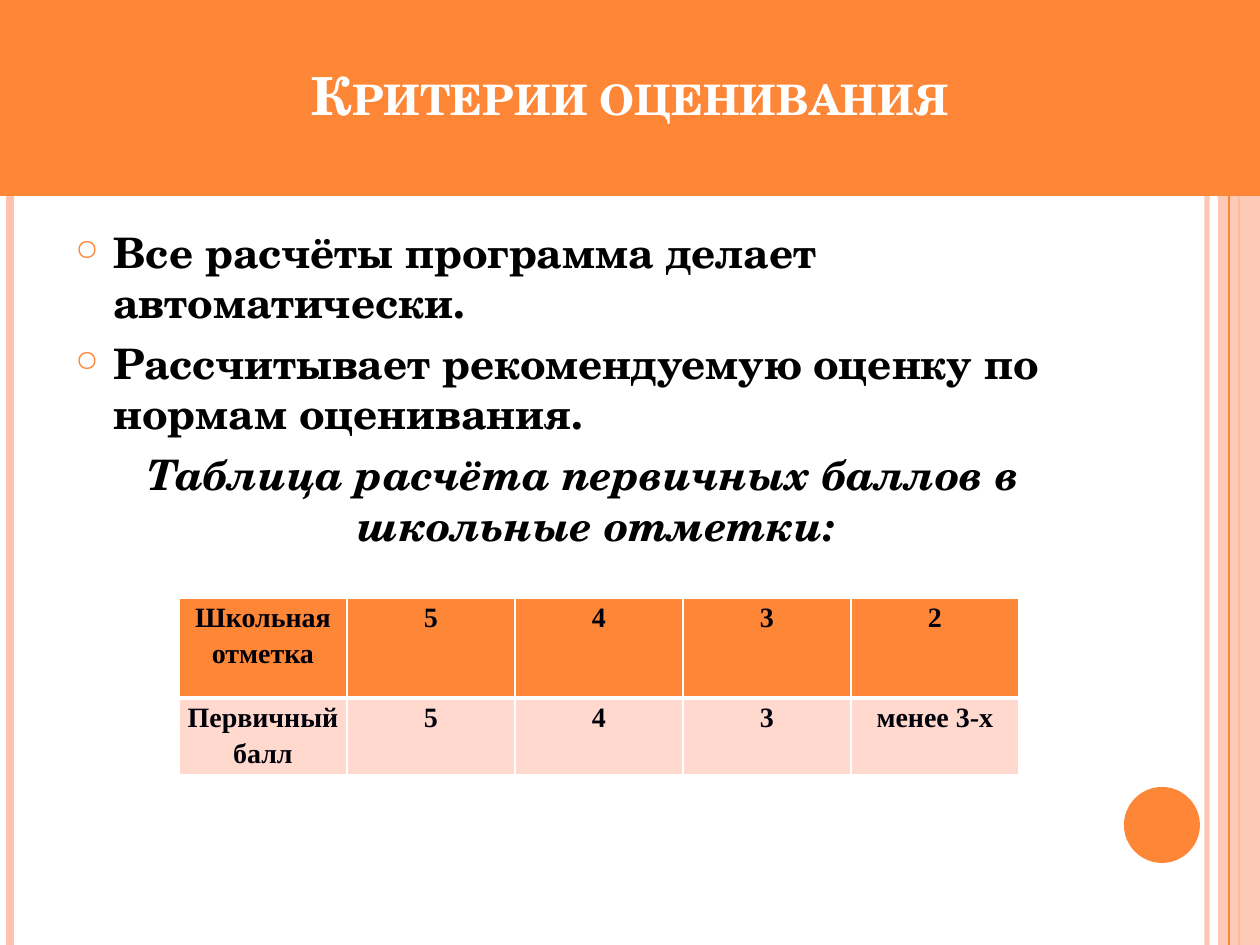
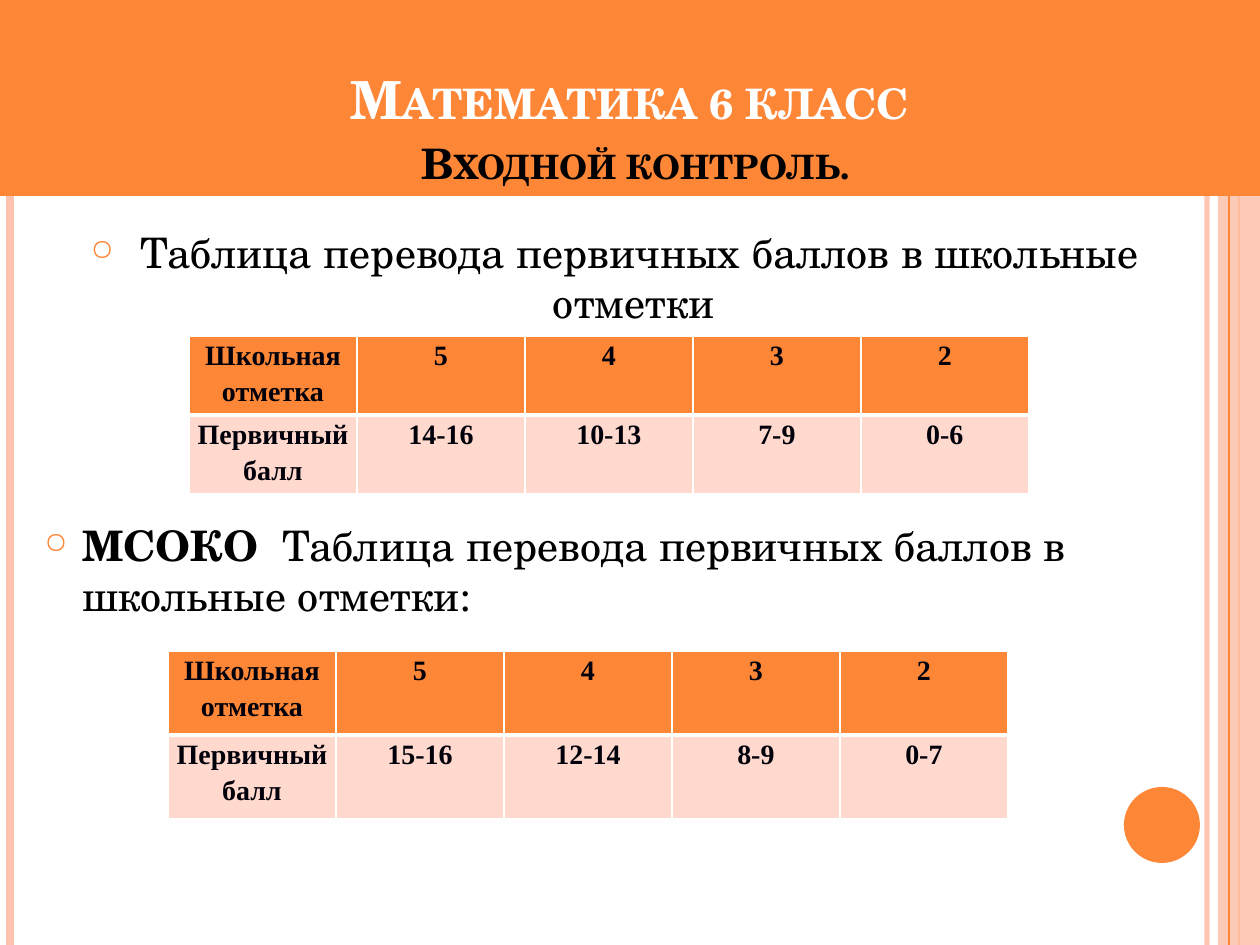
from dataclasses import dataclass

from lxml import etree
from pptx import Presentation
from pptx import util as u
from pptx.dml.color import RGBColor
from pptx.enum import shapes, text
from pptx.oxml import ns

PX = u.Inches(1) / 126
PAGE_WIDTH, PAGE_HEIGHT = 1260, 945
COLUMN_WIDTH = 168
BORDER_SIDES = ("L", "R", "T", "B")


@dataclass(frozen=True)
class Theme:
    accent: str = "FE8637"
    pale: str = "FEC3AE"
    pale_cell: str = "FFD9CE"
    white: str = "FFFFFF"
    black: str = "000000"
    ink: str = "00000A"
    main_font: str = "TeX Gyre Schola"
    table_font: str = "Times New Roman"
    title_size: int = 30
    subtitle_gap_size: int = 28
    body_size: int = 24
    table_size: int = 16


THEME = Theme()


@dataclass(frozen=True)
class Stripe:
    x: int
    width: float
    color: str
    opacity: int = 100


@dataclass(frozen=True)
class Span:
    words: str
    size: int = THEME.body_size
    color: str = THEME.black
    bold: bool = False
    italic: bool = False
    small_caps: bool = False


@dataclass(frozen=True)
class Item:
    spans: tuple[Span, ...]
    bullet: bool = True
    centered: bool = False
    space_before: int = 6


@dataclass(frozen=True)
class MarkTable:
    left: int
    top: int
    row_heights: tuple[int, int]
    scores: tuple[str, ...]


@dataclass(frozen=True)
class Page:
    title_lines: tuple[tuple[Span, ...], ...]
    title_bottom_inset: int
    body_frame: tuple[int, int, int, int]
    items: tuple[Item, ...]
    tables: tuple[MarkTable, ...]


OUTER_STRIPES = (
    Stripe(1207, 3, THEME.pale, 93),
    Stripe(10, 4.5, THEME.pale),
    Stripe(1239, 1.5, THEME.accent),
)
INNER_STRIPE = Stripe(1229, 0.75, THEME.accent)


def title_span(words: str, **style) -> Span:
    return Span(words, **{"size": THEME.title_size, "color": THEME.white,
                          "bold": True, "small_caps": True, **style})


PAGES = (
    Page(
        title_lines=((title_span("Критерии оценивания"),),),
        title_bottom_inset=69,
        body_frame=(63, 220, 1029, 672),
        items=(
            Item((Span("Все расчёты программа делает автоматически.", bold=True),)),
            Item((Span("Рассчитывает рекомендуемую оценку по нормам оценивания.", bold=True),)),
            Item((Span(" Таблица расчёта первичных баллов в школьные отметки:",
                       bold=True, italic=True),), bullet=False, centered=True),
        ),
        tables=(MarkTable(179, 598, (100, 70), ("5", "4", "3", "менее 3-х")),),
    ),
    Page(
        title_lines=(
            (title_span("Математика 6 класс"),),
            (title_span(" ", size=THEME.subtitle_gap_size, color=THEME.black),
             title_span("Входной контроль.", size=THEME.body_size, color=THEME.black)),
        ),
        title_bottom_inset=6,
        body_frame=(32, 220, 1165, 672),
        items=(
            Item((Span(" Таблица перевода первичных баллов в школьные отметки"),), centered=True),
            Item((Span("МСОКО  ", bold=True),
                  Span("Таблица перевода первичных баллов в школьные отметки:")),
                 space_before=110),
        ),
        tables=(
            MarkTable(189, 336, (79, 79), ("14-16", "10-13", "7-9", "0-6")),
            MarkTable(168, 651, (84, 84), ("15-16", "12-14", "8-9", "0-7")),
        ),
    ),
)


def px(*lengths: int) -> list[u.Emu]:
    return [u.Emu(round(length * PX)) for length in lengths]


def rgb(color: str) -> RGBColor:
    return RGBColor.from_string(color)


def add_xml(parent, tag: str, **attributes: str):
    return etree.SubElement(parent, ns.qn(tag), attributes)


def set_opacity(shape, percent: int) -> None:
    for color in shape.element.iter(ns.qn("a:srgbClr")):
        add_xml(color, "a:alpha", val=str(percent * 1000))


def add_span(para, words: str, *, size: int, color: str, font: str = THEME.main_font,
             bold: bool = False, italic: bool = False, small_caps: bool = False) -> None:
    span = para.add_run()
    span.text = words
    span.font.name = font
    span.font.size = u.Pt(size)
    span.font.bold = bold
    span.font.italic = italic
    span.font.color.rgb = rgb(color)
    if small_caps:
        span.font._element.set("cap", "small")


def add_spans(para, spans: tuple[Span, ...]) -> None:
    for span in spans:
        add_span(para, span.words, size=span.size, color=span.color, bold=span.bold,
                 italic=span.italic, small_caps=span.small_caps)


def add_stripe(page, stripe: Stripe):
    line = page.shapes.add_connector(shapes.MSO_CONNECTOR.STRAIGHT,
                                     *px(stripe.x, 0, stripe.x, PAGE_HEIGHT))
    line.line.color.rgb = rgb(stripe.color)
    line.line.width = u.Pt(stripe.width)
    add_xml(line.element.spPr, "a:effectLst")
    if stripe.opacity < 100:
        set_opacity(line, stripe.opacity)
    return line


def add_plain_shape(page, kind, frame: tuple[int, int, int, int], color: str):
    shape = page.shapes.add_shape(kind, *px(*frame))
    shape.shadow.inherit = False
    shape.fill.solid()
    shape.fill.fore_color.rgb = rgb(color)
    shape.line.fill.background()
    return shape


def decorate_layout(layout, page) -> None:
    decorations = [add_stripe(page, stripe) for stripe in OUTER_STRIPES]
    side_band = add_plain_shape(page, shapes.MSO_SHAPE.RECTANGLE,
                                (1218, 0, 42, PAGE_HEIGHT), THEME.pale)
    set_opacity(side_band, 87)
    circle = add_plain_shape(page, shapes.MSO_SHAPE.OVAL, (1124, 787, 76, 76), THEME.accent)
    decorations += [side_band, add_stripe(page, INNER_STRIPE), circle]
    for number, shape in enumerate(decorations, start=101):
        shape.element.xpath(".//p:cNvPr")[0].set("id", str(number))
        layout.shapes.element.append(shape.element)


def fill_title(page, content: Page) -> None:
    title = page.shapes.title
    title.left, title.top, title.width, title.height = px(0, 0, PAGE_WIDTH, 195)
    title.fill.solid()
    title.fill.fore_color.rgb = rgb(THEME.accent)
    title.line.color.rgb = rgb(THEME.accent)
    title.line.width = u.Pt(0.75)
    frame = title.text_frame
    frame.auto_size = text.MSO_AUTO_SIZE.NONE
    frame.vertical_anchor = text.MSO_ANCHOR.BOTTOM
    frame.margin_bottom = px(content.title_bottom_inset)[0]
    para = frame.paragraphs[0]
    para.alignment = text.PP_ALIGN.CENTER
    for index, spans in enumerate(content.title_lines):
        if index:
            para.add_line_break()
        add_spans(para, spans)


def format_item(para, item: Item) -> None:
    para.alignment = text.PP_ALIGN.CENTER if item.centered else text.PP_ALIGN.LEFT
    para.space_before = u.Pt(item.space_before)
    properties = para._p.get_or_add_pPr()
    properties.set("marL", str(u.Inches(0.3)))
    properties.set("indent", str(-u.Inches(0.3)))
    if item.bullet:
        add_xml(add_xml(properties, "a:buClr"), "a:srgbClr", val=THEME.accent)
        add_xml(properties, "a:buSzPct", val="70000")
        add_xml(properties, "a:buChar", char="○")
    else:
        add_xml(properties, "a:buNone")


def add_body(page, content: Page) -> None:
    box = page.shapes.add_textbox(*px(*content.body_frame))
    frame = box.text_frame
    frame.word_wrap = True
    for index, item in enumerate(content.items):
        para = frame.add_paragraph() if index else frame.paragraphs[0]
        format_item(para, item)
        add_spans(para, item.spans)


def set_borders(cell, thick_side: str) -> None:
    properties = cell._tc.get_or_add_tcPr()
    for side in BORDER_SIDES:
        width = u.Pt(3 if side == thick_side else 1)
        border = add_xml(properties, f"a:ln{side}", w=str(width))
        add_xml(add_xml(border, "a:solidFill"), "a:srgbClr", val=THEME.white)


def fill_cell(cell, words: str, color: str, thick_side: str) -> None:
    set_borders(cell, thick_side)
    cell.fill.solid()
    cell.fill.fore_color.rgb = rgb(color)
    cell.margin_left = cell.margin_right = px(1)[0]
    cell.margin_top = cell.margin_bottom = 0
    para = cell.text_frame.paragraphs[0]
    para.alignment = text.PP_ALIGN.CENTER
    para.line_spacing = 1.15
    para.space_after = u.Pt(10)
    add_span(para, words, size=THEME.table_size, color=THEME.ink,
             font=THEME.table_font, bold=True)


def add_mark_table(page, content: MarkTable) -> None:
    rows = (
        (("Школьная отметка", "5", "4", "3", "2"), THEME.accent, "B"),
        (("Первичный балл", *content.scores), THEME.pale_cell, "T"),
    )
    columns = len(rows[0][0])
    table = page.shapes.add_table(
        len(rows), columns,
        *px(content.left, content.top, columns * COLUMN_WIDTH, sum(content.row_heights))).table
    table.first_row = table.horz_banding = False
    for column in table.columns:
        column.width = px(COLUMN_WIDTH)[0]
    for row_index, (labels, color, thick_side) in enumerate(rows):
        table.rows[row_index].height = px(content.row_heights[row_index])[0]
        for column_index, label in enumerate(labels):
            fill_cell(table.cell(row_index, column_index), label, color, thick_side)


def main() -> None:
    deck = Presentation()
    deck.slide_width, deck.slide_height = px(PAGE_WIDTH, PAGE_HEIGHT)
    layout = deck.slide_layouts.get_by_name("Title Only")
    for index, content in enumerate(PAGES):
        page = deck.slides.add_slide(layout)
        if index == 0:
            decorate_layout(layout, page)
        fill_title(page, content)
        add_body(page, content)
        for table in content.tables:
            add_mark_table(page, table)
    deck.save("out.pptx")


if __name__ == "__main__":
    main()
